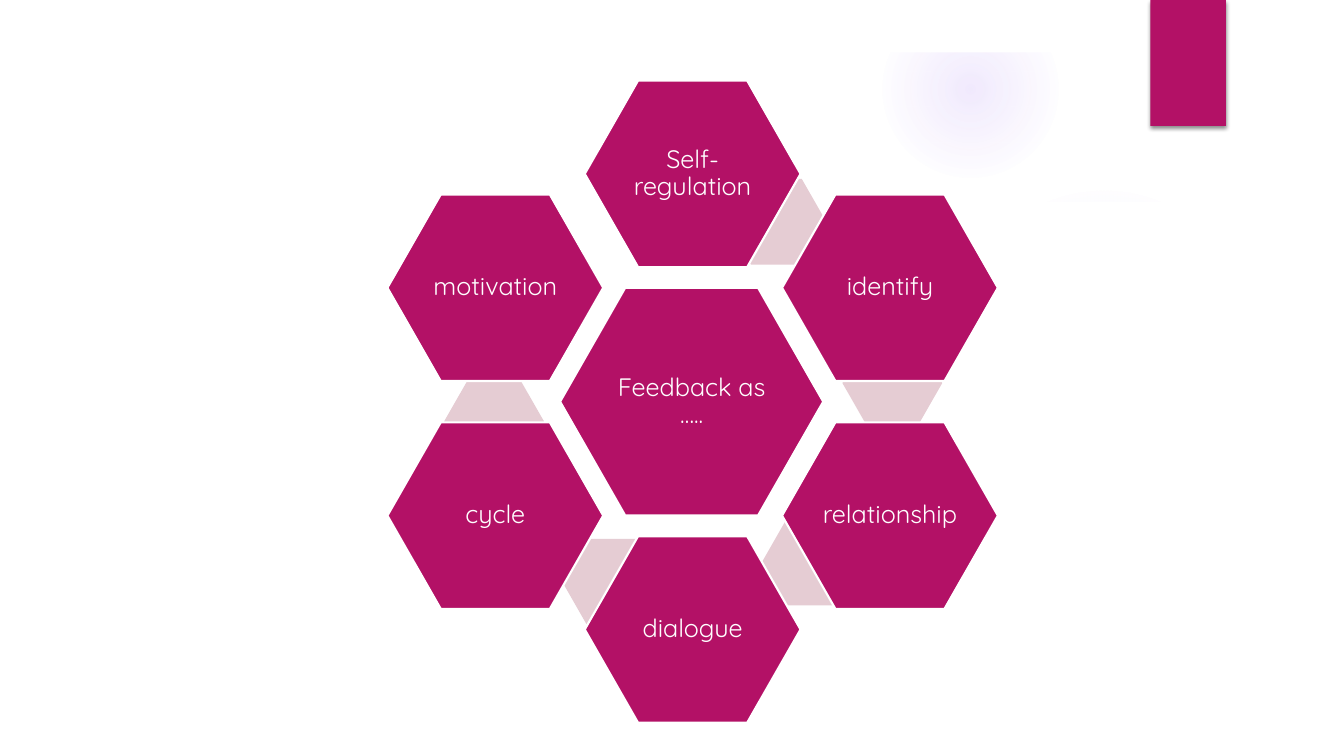
from math import cos, radians, sin

from lxml import etree
from pptx import Presentation
from pptx.dml.color import RGBColor
from pptx.enum.shapes import MSO_SHAPE
from pptx.enum.text import MSO_ANCHOR, PP_ALIGN
from pptx.oxml import parse_xml
from pptx.oxml.ns import nsdecls, qn
from pptx.util import Inches, Pt

MAGENTA = RGBColor(0xB3, 0x11, 0x66)
PINK = RGBColor(0xE5, 0xCC, 0xD3)
LILAC = RGBColor(0x9B, 0x6B, 0xF2)
WHITE = RGBColor(0xFF, 0xFF, 0xFF)

# Each outer hexagon with the centre of the link drawn behind it
RING = [
    ("Self-regulation", (7.7, 2.2)),
    ("identify", (8.85, 3.8)),
    ("relationship", (8.05, 5.58)),
    ("dialogue", (6.07, 5.77)),
    ("cycle", (4.9, 4.18)),
    ("motivation", None),
]
PANEL_EDGE = [
    (0.5, 2.04), (2.49, 2.27), (5.11, 2.44), (7.08, 2.48), (8.4, 2.46),
    (9.49, 2.41), (10.32, 2.35), (11.16, 2.27), (12, 2.17), (12.84, 2.04),
]
SWOOSH = [
    (9.34, 2.5), (10.6, 2.45), (11.8, 2.31), (12.89, 2.14), (12.83, 1.66),
    (12.02, 1.91), (11.21, 2.11), (10.42, 2.27), (9.3, 2.43),
]


def style(shape, color, outlined=False):
    shape.shadow.inherit = False
    shape.fill.solid()
    shape.fill.fore_color.rgb = color
    if outlined:
        shape.line.color.rgb = WHITE
        shape.line.width = Pt(1.5)
    else:
        shape.line.fill.background()
    return shape


def add_preset(slide, kind, left, top, width, height, color, outlined=False):
    shape = slide.shapes.add_shape(
        kind, Inches(left), Inches(top), Inches(width), Inches(height))
    return style(shape, color, outlined)


def add_polygon(slide, points, color):
    builder = slide.shapes.build_freeform(*points[0], scale=Inches(1))
    builder.add_line_segments(points[1:], close=True)
    return style(builder.convert_to_shape(), color)


def write_text(shape, text, size=18, color=WHITE, font="Quicksand"):
    frame = shape.text_frame
    frame.word_wrap = True
    frame.vertical_anchor = MSO_ANCHOR.MIDDLE
    frame.margin_left = frame.margin_right = Inches(0.03)
    frame.margin_top = frame.margin_bottom = Inches(0.03)
    paragraph = frame.paragraphs[0]
    paragraph.alignment = PP_ALIGN.CENTER
    paragraph.line_spacing = 0.9
    run = paragraph.add_run()
    run.text = text
    run.font.size = Pt(size)
    run.font.name = font
    run.font.color.rgb = color


def add_glow(slide, left, top, size, stops):
    """Circle fading outwards; stops are (position, opacity) in percent."""
    glow = add_preset(slide, MSO_SHAPE.OVAL, left, top, size, size, LILAC)
    stop_xml = "".join(
        f'<a:gs pos="{position * 1000}"><a:srgbClr val="{LILAC}">'
        f'<a:alpha val="{opacity * 1000}"/></a:srgbClr></a:gs>'
        for position, opacity in stops)
    gradient = parse_xml(
        f'<a:gradFill {nsdecls("a")}><a:gsLst>{stop_xml}</a:gsLst>'
        '<a:path path="circle"><a:fillToRect l="50000" t="50000" '
        'r="50000" b="50000"/></a:path></a:gradFill>')
    properties = glow.element.spPr
    properties.replace(properties.find(qn("a:solidFill")), gradient)


def add_backdrop(slide, width, height):
    # Soft glows, partly covered by the white panels
    add_glow(slide, 9.41, 1.83, 3.08, [(0, 7), (36, 6), (69, 0)])
    add_glow(slide, 8.75, 0.01, 1.75, [(0, 14), (36, 7), (73, 0)])
    swoosh = add_polygon(slide, SWOOSH, WHITE)
    color = swoosh.element.spPr.find(qn("a:solidFill"))[0]
    etree.SubElement(color, qn("a:alpha")).set("val", "20000")
    add_polygon(slide, PANEL_EDGE + [(12.84, 7), (0.5, 7)], WHITE)
    add_preset(slide, MSO_SHAPE.RECTANGLE, 0, 0, width, 0.52, WHITE)


def add_tab(slide, left, top, width, height):
    tab = add_preset(slide, MSO_SHAPE.RECTANGLE, left, top, width, height, MAGENTA)
    effects = tab.element.spPr.find(qn("a:effectLst"))
    effects.append(parse_xml(
        f'<a:outerShdw {nsdecls("a")} blurRad="{Pt(3)}" dist="{Pt(2)}" '
        'dir="5400000" rotWithShape="0"><a:srgbClr val="000000">'
        '<a:alpha val="45000"/></a:srgbClr></a:outerShdw>'))


def add_hexagon(slide, center, width, height, color=MAGENTA, text=None):
    x, y = center
    hexagon = add_preset(slide, MSO_SHAPE.HEXAGON, x - width / 2, y - height / 2,
                         width, height, color, outlined=text is not None)
    hexagon.adjustments[0] = 0.286
    if text:
        write_text(hexagon, text)


def add_hexagon_ring(slide, left, top, width, height):
    center_x, center_y = left + width / 2, top + height / 2
    cell_width, cell_height = 2.14, 1.85
    radius = (height - cell_height) / 2
    add_hexagon(slide, (center_x - 0.01, center_y), 2.61, 2.26, text="Feedback as …..")
    for index, (label, link_center) in enumerate(RING):
        if link_center:
            add_hexagon(slide, link_center, 0.99, 0.85, PINK)
        angle = radians(60 * index)
        center = center_x + radius * sin(angle), center_y - radius * cos(angle)
        add_hexagon(slide, center, cell_width, cell_height, text=label)


def main():
    presentation = Presentation()
    presentation.slide_width = Inches(13.33)
    presentation.slide_height = Inches(7.5)
    slide = presentation.slides.add_slide(presentation.slide_layouts[6])
    add_backdrop(slide, 13.33, 7.5)
    add_tab(slide, 11.41, 0, 0.75, 1.25)
    add_hexagon_ring(slide, 3.83, 0.8, 6.08, 6.37)
    presentation.save("out.pptx")


if __name__ == "__main__":
    main()
